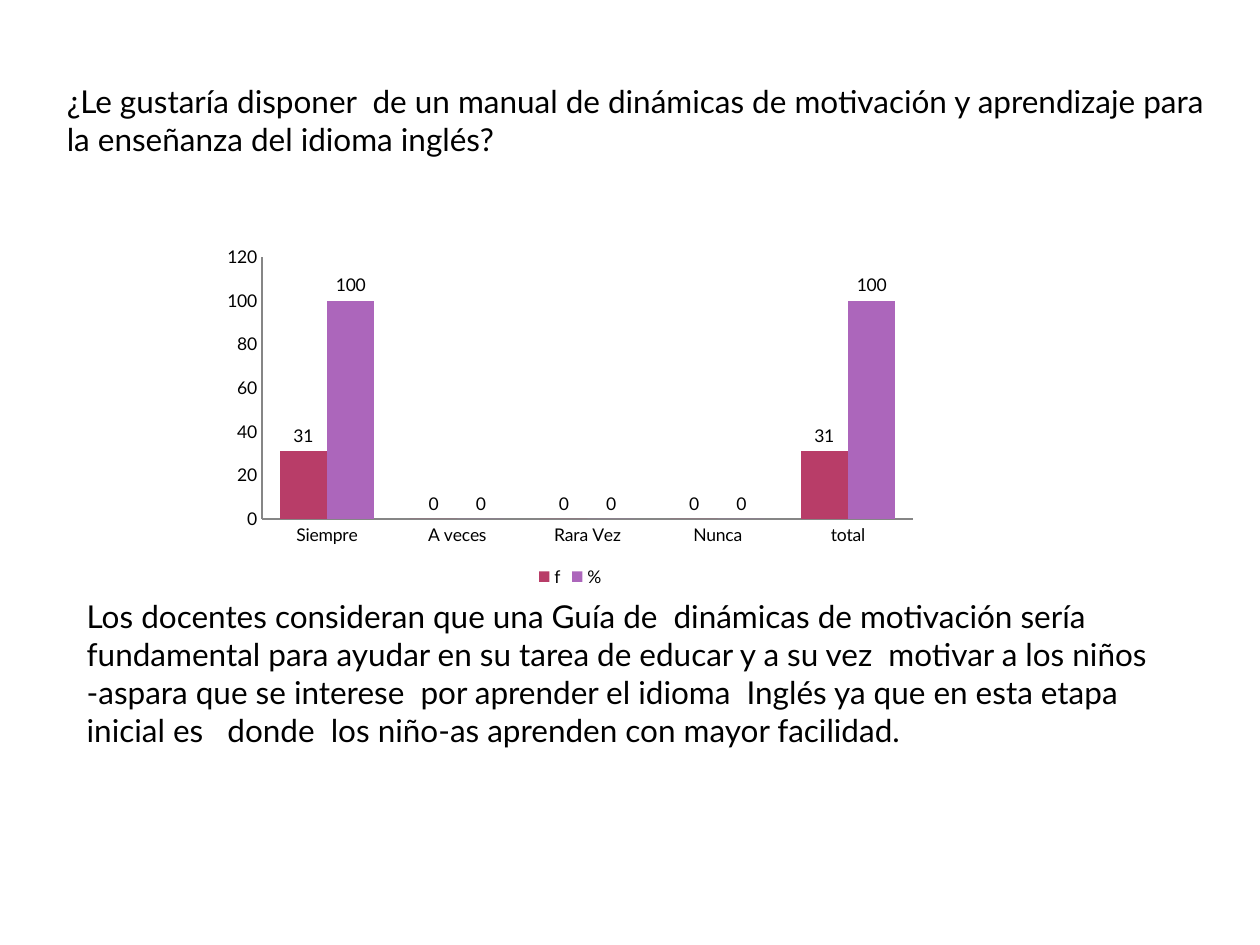
from pptx import Presentation
from pptx.chart.data import CategoryChartData
from pptx.dml.color import RGBColor
from pptx.enum.chart import XL_CHART_TYPE, XL_LABEL_POSITION, XL_LEGEND_POSITION, XL_TICK_MARK
from pptx.enum.text import MSO_ANCHOR, MSO_AUTO_SIZE, PP_ALIGN
from pptx.util import Inches, Pt

COLUMNS = XL_CHART_TYPE.COLUMN_CLUSTERED
OUTSIDE_END = XL_LABEL_POSITION.OUTSIDE_END
BOTTOM = XL_LEGEND_POSITION.BOTTOM
NO_TICK = XL_TICK_MARK.NONE

FONT = "Lato"
BLACK = "000000"
AXIS_GREY = "868686"

QUESTION = ("¿Le gustaría disponer  de un manual de dinámicas de motivación y aprendizaje "
            "para la enseñanza del idioma inglés?")
FINDING = ("Los docentes consideran que una Guía de  dinámicas de motivación sería "
           "fundamental para ayudar en su tarea de educar y a su vez  motivar a los niños "
           "-aspara que se interese  por aprender el idioma  Inglés ya que en esta etapa "
           "inicial es   donde  los niño-as aprenden con mayor facilidad.")
ANSWERS = ["Siempre", "A veces", "Rara Vez", "Nunca", "total"]
SERIES = [
    ("f", (31, 0, 0, 0, 31), "B83D68"),
    ("%", (100, 0, 0, 0, 100), "AC66BB"),
]

QUESTION_BOX = (0.43, 0.6, 9.37, 0.71)
CHART_BOX = (1.69, 1.9, 5.67, 2.8)
FINDING_BOX = (0.59, 4.69, 8.74, 1.31)


def rgb(color):
    return RGBColor.from_string(color)


def style_font(font, size):
    font.name = FONT
    font.size = Pt(size)
    font.color.rgb = rgb(BLACK)


def write(sp, box, text):
    sp.left, sp.top, sp.width, sp.height = map(Inches, box)
    tf = sp.text_frame
    tf.word_wrap = True
    tf.auto_size = MSO_AUTO_SIZE.SHAPE_TO_FIT_TEXT
    tf.vertical_anchor = MSO_ANCHOR.TOP
    p = tf.paragraphs[0]
    p.alignment = PP_ALIGN.LEFT
    r = p.add_run()
    r.text = text
    style_font(r.font, 18)


def add_answers_chart(slide):
    data = CategoryChartData()
    data.categories = ANSWERS
    for name, values, _ in SERIES:
        data.add_series(name, values)
    chart = slide.shapes.add_chart(COLUMNS, *map(Inches, CHART_BOX), data).chart
    style_font(chart.font, 10)
    chart.has_title = False
    chart.has_legend = True
    chart.legend.position = BOTTOM
    chart.legend.include_in_layout = False

    for axis in (chart.category_axis, chart.value_axis):
        axis.has_major_gridlines = False
        axis.major_tick_mark = axis.minor_tick_mark = NO_TICK
        axis.format.line.color.rgb = rgb(AXIS_GREY)
        axis.format.line.width = Pt(0.75)
    chart.value_axis.minimum_scale = 0
    chart.value_axis.maximum_scale = 120
    chart.value_axis.major_unit = 20

    plot = chart.plots[0]
    plot.gap_width = 75
    plot.overlap = 0
    plot.vary_by_categories = False
    plot.has_data_labels = True
    plot.data_labels.show_value = True
    plot.data_labels.position = OUTSIDE_END
    for series, (_, _, color) in zip(plot.series, SERIES):
        series.format.fill.solid()
        series.format.fill.fore_color.rgb = rgb(color)


prs = Presentation()
prs.slide_width, prs.slide_height = Inches(10), Inches(7.5)
slide = prs.slides.add_slide(prs.slide_layouts[5])
write(slide.shapes.title, QUESTION_BOX, QUESTION)
write(slide.shapes.add_textbox(*map(Inches, FINDING_BOX)), FINDING_BOX, FINDING)
add_answers_chart(slide)
prs.save("out.pptx")
